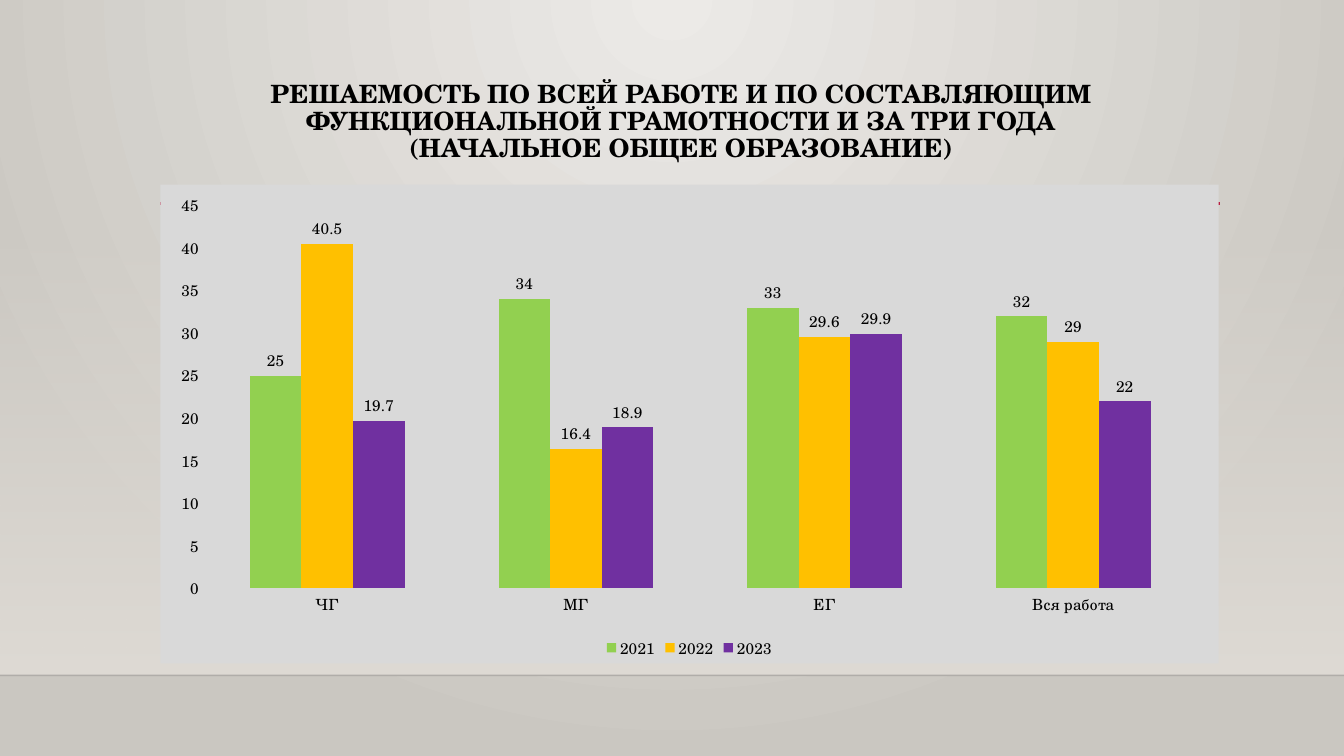
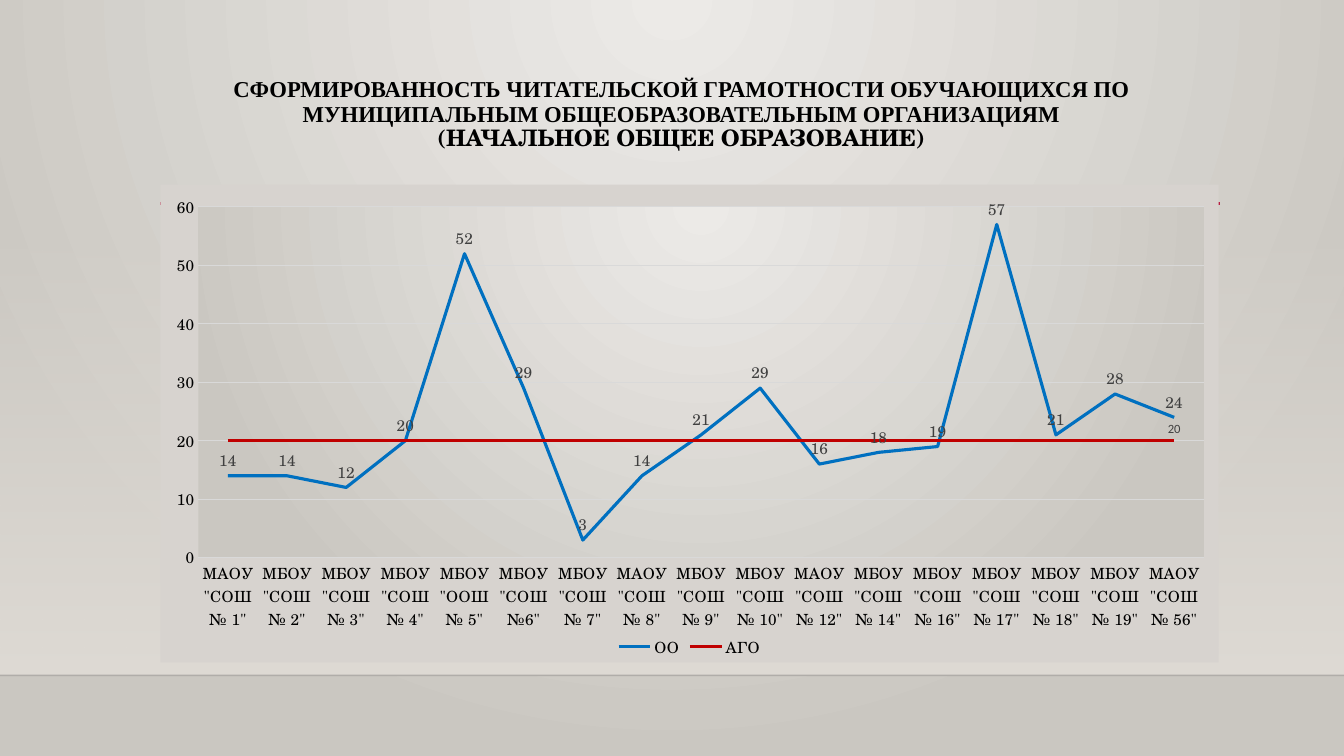
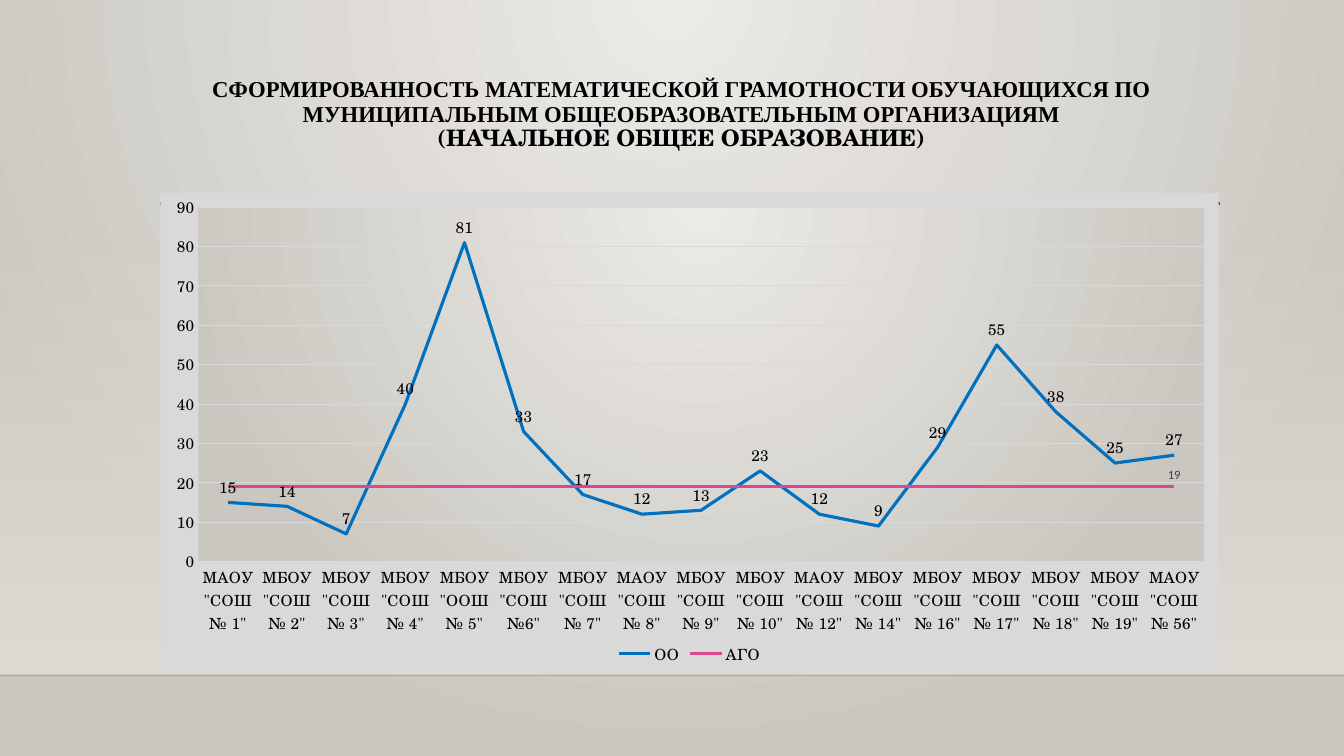
import lxml.etree
import pptx
import pptx.chart.data
import pptx.dml.color
import pptx.enum.chart
import pptx.enum.shapes
import pptx.enum.text
import pptx.oxml
import pptx.oxml.ns
import pptx.util

Pt = pptx.util.Pt
qn = pptx.oxml.ns.qn
NS = pptx.oxml.ns.nsdecls("a", "c")

SERIF = "TeX Gyre Schola"
TIMES = "Times New Roman"
BLACK, DARK_GREY, GRID_GREY = "000000", "404040", "D9D9D9"
BLUE = "0070C0"

SCHOOLS = [
    'МАОУ "СОШ № 1"', 'МБОУ "СОШ № 2"', 'МБОУ "СОШ № 3"', 'МБОУ "СОШ № 4"',
    'МБОУ "ООШ № 5"', 'МБОУ "СОШ №6"', 'МБОУ "СОШ № 7"', 'МАОУ "СОШ № 8"',
    'МБОУ "СОШ № 9"', 'МБОУ "СОШ № 10"', 'МАОУ "СОШ № 12"', 'МБОУ "СОШ № 14"',
    'МБОУ "СОШ № 16"', 'МБОУ "СОШ № 17"', 'МБОУ "СОШ № 18"', 'МБОУ "СОШ № 19"',
    'МАОУ "СОШ № 56"',
]
LEVEL = "(НАЧАЛЬНОЕ ОБЩЕЕ ОБРАЗОВАНИЕ)"


def rgb(code):
    return pptx.dml.color.RGBColor.from_string(code)


def style_font(font, size=11, face=SERIF, color=BLACK, bold=None):
    font.size, font.name, font.bold = Pt(size), face, bold
    font.color.rgb = rgb(color)


def write(paragraph, text, **style):
    run = paragraph.add_run()
    run.text = text
    style_font(run.font, **style)


def gradient(start, end, direction, start_alpha=100):
    """Return a two-stop gradient fill; direction is its a:lin or a:path element."""
    return pptx.oxml.parse_xml(
        f'<a:gradFill {NS} rotWithShape="1"><a:gsLst>'
        f'<a:gs pos="0"><a:srgbClr val="{start}"><a:alpha val="{start_alpha * 1000}"/></a:srgbClr></a:gs>'
        f'<a:gs pos="100000"><a:srgbClr val="{end}"/></a:gs></a:gsLst>{direction}</a:gradFill>')


def spotlight():
    return gradient("ECEAE7", "CAC7C1",
                    '<a:path path="circle"><a:fillToRect l="43000" t="0" r="43000" b="100000"/></a:path>')


def solid(color):
    return pptx.oxml.parse_xml(f'<a:solidFill {NS}><a:srgbClr val="{color}"/></a:solidFill>')


def replace_solid(properties, fill):
    properties.replace(properties.find(qn("a:solidFill")), fill)


def borderless(fill):
    """Return chart shape properties with the given fill and no outline."""
    properties = pptx.oxml.parse_xml(f"<c:spPr {NS}><a:ln><a:noFill/></a:ln></c:spPr>")
    properties.insert(0, fill)
    return properties


class Deck:
    def __init__(self):
        self.prs = pptx.Presentation()
        self.prs.slide_width, self.prs.slide_height = Pt(960), Pt(540)
        self.slide = None
        master = self.prs.slide_master
        master.background.fill.solid()
        replace_solid(next(master._element.iter(qn("p:bgPr"))), spotlight())

    def start_slide(self):
        self.slide = self.prs.slides.add_slide(self.prs.slide_layouts[5])
        self.floor_band()
        self.rule(0, 960, 482.4, "000001", 1, alpha=20)
        self.rule(114.5, 871.2, 145.4, "B71E42", 2.5)

    def floor_band(self):
        band = self.slide.shapes.add_shape(
            pptx.enum.shapes.MSO_SHAPE.RECTANGLE, 0, Pt(159.1), Pt(960), Pt(323.3))
        band.shadow.inherit = False
        band.line.fill.background()
        band.fill.solid()
        replace_solid(band._element.spPr, gradient(
            "DFDBD5", "DFDBD5", '<a:lin ang="5400000" scaled="0"/>', start_alpha=0))

    def rule(self, left, right, top, color, width, alpha=100):
        line = self.slide.shapes.add_connector(
            pptx.enum.shapes.MSO_CONNECTOR.STRAIGHT, Pt(left), Pt(top), Pt(right), Pt(top))
        line.line.width = Pt(width)
        line.line.color.rgb = rgb(color)
        properties = line._element.spPr
        stroke = next(properties.iter(qn("a:srgbClr")))
        lxml.etree.SubElement(stroke, qn("a:alpha"), val=str(alpha * 1000))
        lxml.etree.SubElement(properties, qn("a:effectLst"))

    def title(self, lines, size, top_inset):
        """Write (text, typeface) lines into the title, split by line breaks."""
        heading = self.slide.shapes.title
        heading.left, heading.top, heading.width, heading.height = map(Pt, (121, 28.8, 730.8, 108.7))
        frame = heading.text_frame
        frame.word_wrap = True
        frame.auto_size = pptx.enum.text.MSO_AUTO_SIZE.NONE
        frame.vertical_anchor = pptx.enum.text.MSO_ANCHOR.TOP
        frame.margin_top = Pt(top_inset)
        paragraph = frame.paragraphs[0]
        paragraph.alignment = pptx.enum.text.PP_ALIGN.CENTER
        paragraph.line_spacing = 0.9
        for index, (text, face) in enumerate(lines):
            if index:
                paragraph.add_line_break()
            write(paragraph, text, face=face, size=size, bold=True)
        for line_break in paragraph._p.iter(qn("a:br")):
            lxml.etree.SubElement(line_break, qn("a:rPr"), sz=str(round(size * 100)))

    def chart(self, kind, categories, series, top, height, fill, maximum, step, number_format="General"):
        data = pptx.chart.data.CategoryChartData(number_format=number_format)
        data.categories = categories
        for name, values in series:
            data.add_series(name, values)
        chart = self.slide.shapes.add_chart(
            kind, Pt(114.5), Pt(top), Pt(756), Pt(height), data).chart
        chart.has_title = False
        style_font(chart.font, size=10, face="Calibri")
        chart._chartSpace.find(qn("c:chart")).addnext(borderless(solid(fill)))
        chart.has_legend = True
        chart.legend.position = pptx.enum.chart.XL_LEGEND_POSITION.BOTTOM
        chart.legend.include_in_layout = False
        style_font(chart.legend.font)
        for axis in (chart.category_axis, chart.value_axis):
            axis.major_tick_mark = axis.minor_tick_mark = pptx.enum.chart.XL_TICK_MARK.NONE
            style_font(axis.tick_labels.font)
        scale = chart.value_axis
        scale.minimum_scale, scale.maximum_scale, scale.major_unit = 0, maximum, step
        scale.format.line.fill.background()
        scale.tick_labels.number_format = number_format
        scale.tick_labels.number_format_is_linked = False
        scale.has_major_gridlines = True
        for line in (chart.category_axis.format.line, scale.major_gridlines.format.line):
            line.color.rgb = rgb(GRID_GREY)
            line.width = Pt(0.75)
        chart.plots[0].vary_by_categories = False
        return chart

    def value_labels(self, series, position, color=BLACK, number_format="General"):
        labels = series.data_labels
        labels.show_value = True
        labels.position = position
        labels.number_format = number_format
        labels.number_format_is_linked = False
        style_font(labels.font, color=color)

    def column_chart(self, categories, series, colors, **layout):
        chart = self.chart(pptx.enum.chart.XL_CHART_TYPE.COLUMN_CLUSTERED, categories, series, **layout)
        chart.plots[0].gap_width = 182
        for year, color in zip(chart.plots[0].series, colors):
            year.format.fill.solid()
            year.format.fill.fore_color.rgb = rgb(color)
            self.value_labels(year, pptx.enum.chart.XL_LABEL_POSITION.OUTSIDE_END)

    def school_chart(self, results, average, average_color, label_color, plot_top, plot_height, **layout):
        """Plot school results against the constant district average."""
        above = pptx.enum.chart.XL_LABEL_POSITION.ABOVE
        chart = self.chart(
            pptx.enum.chart.XL_CHART_TYPE.LINE, SCHOOLS,
            [("ОО", results), ("АГО", [average] * len(SCHOOLS))],
            step=10, number_format="0", **layout)
        schools, district = chart.plots[0].series
        for series, color in ((schools, BLUE), (district, average_color)):
            series.smooth = False
            series.format.line.color.rgb = rgb(color)
            series.format.line.width = Pt(2.25)
        self.value_labels(schools, above, label_color, "0")
        district.data_labels.show_value = False
        last_label = district.points[len(SCHOOLS) - 1].data_label
        last_label.position = above
        style_font(last_label.font, size=9, face="Calibri", color=DARK_GREY)

        plot_area = next(chart._chartSpace.iter(qn("c:plotArea")))
        for automatic in plot_area.findall(qn("c:layout")):
            plot_area.remove(automatic)
        bounds = {"layoutTarget": "inner", "xMode": "edge", "yMode": "edge",
                  "x": 0.036, "y": plot_top, "w": 0.95, "h": plot_height}
        settings = "".join(f'<c:{name} val="{value}"/>' for name, value in bounds.items())
        plot_area.insert(0, pptx.oxml.parse_xml(
            f"<c:layout {NS}><c:manualLayout>{settings}</c:manualLayout></c:layout>"))
        plot_area.append(borderless(spotlight()))


def main():
    deck = Deck()
    deck.start_slide()
    deck.title([("РЕШАЕМОСТЬ ПО ВСЕЙ РАБОТЕ И ПО СОСТАВЛЯЮЩИМ ФУНКЦИОНАЛЬНОЙ ГРАМОТНОСТИ И ЗА ТРИ ГОДА",
                 SERIF), (LEVEL, SERIF)], size=18, top_inset=29.5)
    deck.column_chart(
        ["ЧГ", "МГ", "ЕГ", "Вся работа"],
        [("2021", [25, 34, 33, 32]), ("2022", [40.5, 16.4, 29.6, 29]), ("2023", [19.7, 18.9, 29.9, 22])],
        ["92D050", "FFC000", "7030A0"],
        top=131.8, height=342, fill=GRID_GREY, maximum=45, step=5)

    school_slides = [
        ("ЧИТАТЕЛЬСКОЙ", dict(
            results=[14, 14, 12, 20, 52, 29, 3, 14, 21, 29, 16, 18, 19, 57, 21, 28, 24],
            average=20, average_color="C00000", label_color=DARK_GREY, plot_top=0.047,
            plot_height=0.734, top=131.8, height=341.3, fill="D7D3CF", maximum=60)),
        ("МАТЕМАТИЧЕСКОЙ", dict(
            results=[15, 14, 7, 40, 81, 33, 17, 12, 13, 23, 12, 9, 29, 55, 38, 25, 27],
            average=19, average_color="DE478E", label_color=BLACK, plot_top=0.031,
            plot_height=0.743, top=137.5, height=340.6, fill=GRID_GREY, maximum=90)),
    ]
    for literacy, chart in school_slides:
        deck.start_slide()
        deck.title([(f"СФОРМИРОВАННОСТЬ {literacy} ГРАМОТНОСТИ ОБУЧАЮЩИХСЯ ПО "
                     "МУНИЦИПАЛЬНЫМ ОБЩЕОБРАЗОВАТЕЛЬНЫМ ОРГАНИЗАЦИЯМ", TIMES), (LEVEL, SERIF)],
                   size=16.2, top_inset=27)
        deck.school_chart(**chart)
    deck.prs.save("out.pptx")


if __name__ == "__main__":
    main()
